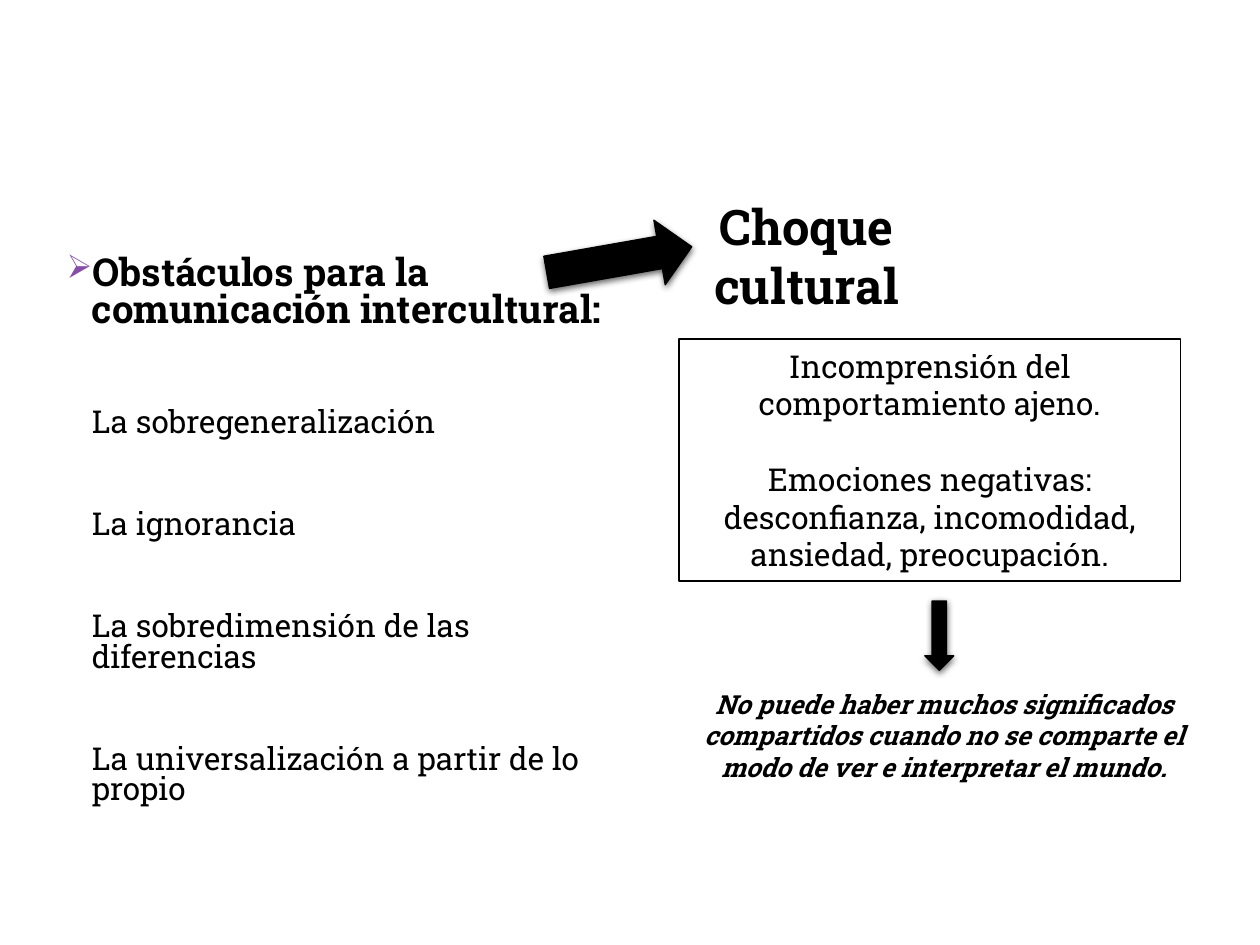
import pptx
import pptx.util
import pptx.dml.color
import pptx.enum.shapes
import pptx.enum.text
import pptx.oxml
import pptx.oxml.ns

COLORS = {"ink": "000000", "paper": "FFFFFF", "bullet": "874EA9"}
FONT = "Roboto Slab"
COLS, ROWS = 100, 75
WIDTH, HEIGHT = pptx.util.Inches(10), pptx.util.Inches(7.5)
SHAPES = pptx.enum.shapes.MSO_SHAPE
ANCHOR = pptx.enum.text.MSO_ANCHOR
CENTER = pptx.enum.text.PP_ALIGN.CENTER
OBSTACLES = [
    "La sobregeneralización",
    "La ignorancia",
    "La sobredimensión de las diferencias",
    "La universalización a partir de lo propio",
]


def cells(col, row, cols, rows):
    return (int(WIDTH * col / COLS), int(HEIGHT * row / ROWS),
            int(WIDTH * cols / COLS), int(HEIGHT * rows / ROWS))


def rgb(name):
    return pptx.dml.color.RGBColor.from_string(COLORS[name])


def add_xml(parent, xml):
    ns = pptx.oxml.ns.nsdecls("a")
    parent.append(pptx.oxml.parse_xml(xml.replace(">", f" {ns}>", 1)
                                      if "/>" not in xml.split(">")[0] + ">"
                                      else xml.replace("/>", f" {ns}/>", 1)))


def format_paragraph(p, size, bold=False, italic=False, align=None, before=0):
    p.alignment = align
    p.space_before = pptx.util.Pt(before)
    for r in p.runs:
        r.font.name = FONT
        r.font.size = pptx.util.Pt(size)
        r.font.bold = bold
        r.font.italic = italic
        r.font.color.rgb = rgb("ink")


def fill_text(sp, texts, size, gap=0, anchor=ANCHOR.TOP, **style):
    tf = sp.text_frame
    tf.word_wrap = True
    tf.auto_size = pptx.enum.text.MSO_AUTO_SIZE.NONE
    tf.vertical_anchor = anchor
    tf.text = "\n".join(texts)
    for i, p in enumerate(tf.paragraphs):
        format_paragraph(p, size, before=gap if i else 0, **style)
    return tf


def add_title(s, text, place):
    sp = s.shapes.title
    sp.left, sp.top, sp.width, sp.height = place
    fill_text(sp, [text], 28, bold=True, align=CENTER)


def add_note(s, text, place):
    sp = s.shapes.add_textbox(*place)
    fill_text(sp, [text], 15, bold=True, italic=True, align=CENTER)


def add_frame(s, texts, place):
    sp = s.shapes.add_shape(SHAPES.RECTANGLE, *place)
    sp.shadow.inherit = False
    sp.fill.solid()
    sp.fill.fore_color.rgb = rgb("paper")
    sp.line.color.rgb = rgb("ink")
    sp.line.width = pptx.util.Pt(1)
    fill_text(sp, texts, 18, gap=21.5, anchor=ANCHOR.MIDDLE, align=CENTER)


def add_obstacles(s, heading, items, place):
    sp = s.shapes.add_textbox(*place)
    tf = fill_text(sp, [heading] + items, 18, gap=41)
    hang = pptx.util.Inches(0.2)
    for p in tf.paragraphs:
        p.line_spacing = 0.8
        p._p.get_or_add_pPr().set("marL", str(hang))
    head, first = tf.paragraphs[:2]
    pPr = head._p.get_or_add_pPr()
    pPr.set("indent", str(-hang))
    add_xml(pPr, f'<a:buClr><a:srgbClr val="{COLORS["bullet"]}"/></a:buClr>')
    add_xml(pPr, '<a:buSzPct val="85000"/>')
    add_xml(pPr, '<a:buChar char="➢"/>')
    format_paragraph(head, 22, bold=True)
    first.space_before = pptx.util.Pt(45)


def add_arrow(s, shape, place, rotation=0):
    sp = s.shapes.add_shape(shape, *place)
    sp.rotation = rotation
    sp.fill.solid()
    sp.fill.fore_color.rgb = rgb("ink")
    sp.line.color.rgb = rgb("ink")
    sp.line.width = pptx.util.Pt(0.75)
    sp.shadow.inherit = False
    effects = sp._element.spPr.find(pptx.oxml.ns.qn("a:effectLst"))
    blur, dist = pptx.util.Pt(4), pptx.util.Pt(1.5)
    add_xml(effects, f'<a:outerShdw blurRad="{blur}" dist="{dist}" dir="5400000">'
                     f'<a:srgbClr val="{COLORS["ink"]}"><a:alpha val="60000"/>'
                     '</a:srgbClr></a:outerShdw>')


def main():
    prs = pptx.Presentation()
    prs.slide_width, prs.slide_height = WIDTH, HEIGHT
    s = prs.slides.add_slide(prs.slide_layouts[5])
    add_obstacles(s, "Obstáculos para la comunicación intercultural:",
                  OBSTACLES, cells(4.3, 19.9, 46.5, 8.9))
    add_frame(s, ["Incomprensión del comportamiento ajeno.",
                  "Emociones negativas: desconfianza, incomodidad, "
                  "ansiedad, preocupación."], cells(53.9, 26.9, 39.8, 19.2))
    add_title(s, "Choque cultural", cells(52.3, 15.1, 23.4, 10.4))
    add_arrow(s, SHAPES.RIGHT_ARROW, cells(43.3, 18, 11.7, 5.2), rotation=350)
    add_note(s, "No puede haber muchos significados compartidos cuando no se "
                "comparte el modo de ver e interpretar el mundo.",
             cells(52.3, 54.1, 45.3, 8.6))
    add_arrow(s, SHAPES.DOWN_ARROW, cells(73.4, 47.7, 2.3, 5.5))
    prs.save("out.pptx")


if __name__ == "__main__":
    main()
